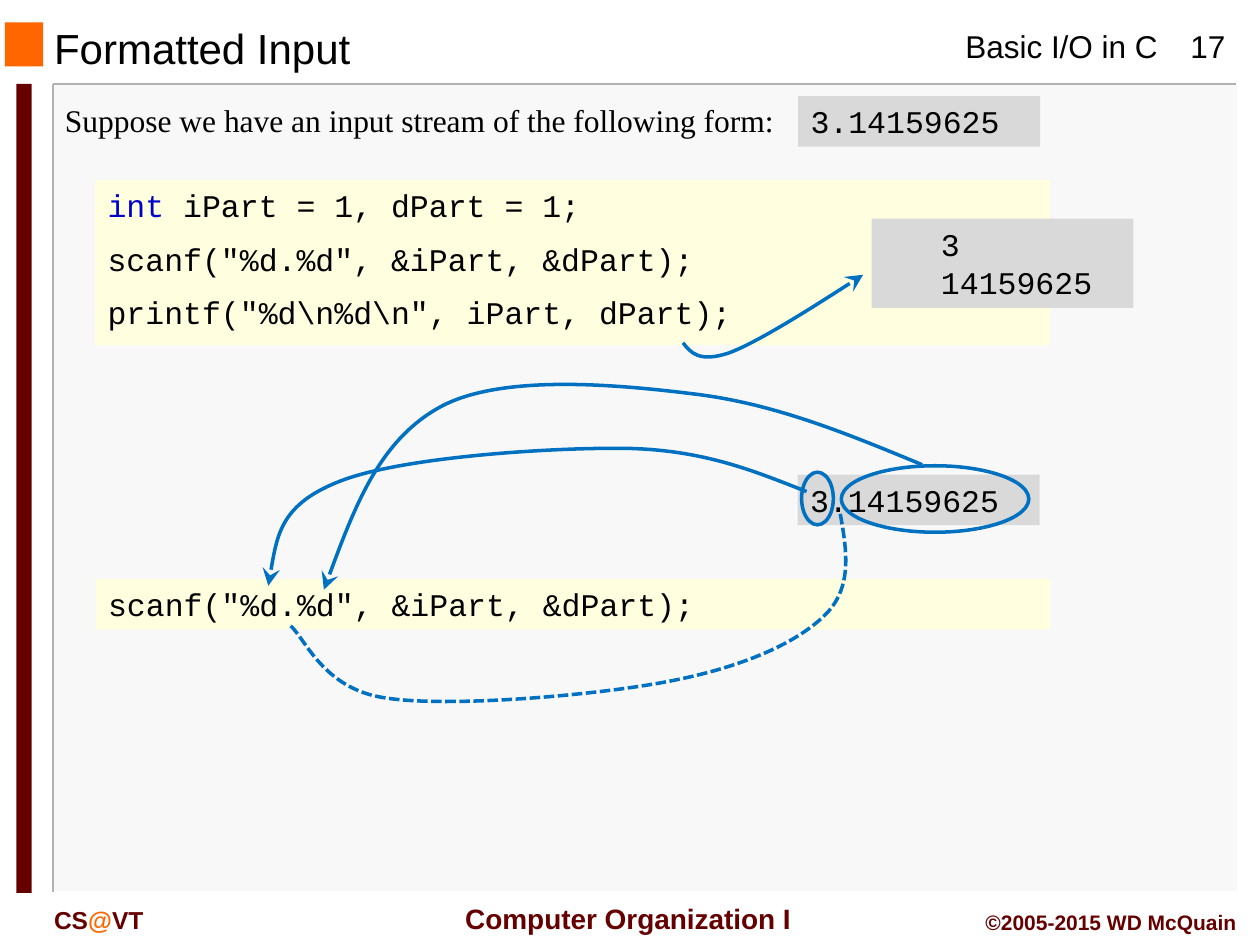
"""Build the "Formatted Input" slide on reading numbers with scanf."""
from lxml import etree
from pptx import Presentation
from pptx import util as u
from pptx.dml.color import RGBColor
from pptx.enum import dml, shapes, text
from pptx.oxml.ns import qn

BLACK = RGBColor(0x00, 0x00, 0x00)
MAROON = RGBColor(0x66, 0x00, 0x00)
ORANGE = RGBColor(0xFF, 0x66, 0x00)
PANEL = RGBColor(0xF8, 0xF8, 0xF8)
RULE = RGBColor(0xB2, 0xB2, 0xB2)
GREY = RGBColor(0xD9, 0xD9, 0xD9)
CREAM = RGBColor(0xFF, 0xFF, 0xE0)
BLUE = RGBColor(0x00, 0x70, 0xC0)
KEYWORD = RGBColor(0x00, 0x00, 0xCC)
LEFT, CENTER, RIGHT = text.PP_ALIGN.LEFT, text.PP_ALIGN.CENTER, text.PP_ALIGN.RIGHT
SCANF = 'scanf("%d.%d", &iPart, &dPart);'

deck = Presentation()
deck.slide_width, deck.slide_height = u.Cm(25.4), u.Cm(19.05)
slide = deck.slides.add_slide(deck.slide_layouts[6])


def add_box(kind, box, fill=None, line=None):
    shape = slide.shapes.add_shape(kind, *map(u.Cm, box))
    shape.shadow.inherit = False
    if fill is None:
        shape.fill.background()
    else:
        shape.fill.solid()
        shape.fill.fore_color.rgb = fill
    if line is None:
        shape.line.fill.background()
    else:
        shape.line.color.rgb = line
        shape.line.width = u.Pt(2)
    return shape


def write(shape, paragraphs, font, size, color=BLACK, bold=False, align=LEFT, wrap=True):
    frame = shape.text_frame
    frame.word_wrap = wrap
    frame.vertical_anchor = text.MSO_ANCHOR.MIDDLE
    for index, runs in enumerate(paragraphs):
        paragraph = frame.paragraphs[0] if index == 0 else frame.add_paragraph()
        paragraph.alignment = align
        paragraph.space_before = u.Pt(9 if index else 0)
        paragraph.font.name, paragraph.font.size = font, u.Pt(size)
        paragraph.font.bold = bold
        for words, tint in runs:
            for row, line in enumerate(words.split("\n")):
                if row:
                    paragraph.add_line_break()
                run = paragraph.add_run()
                run.text = line
                run.font.color.rgb = tint or color


RECT, OVAL = shapes.MSO_SHAPE.RECTANGLE, shapes.MSO_SHAPE.OVAL
for box, fill in [
    ((1.08, 1.7, 23.86, 16.26), PANEL),
    ((0.1, 0.45, 0.77, 0.89), ORANGE),
    ((0.33, 1.69, 0.31, 16.31), MAROON),
]:
    add_box(RECT, box, fill)

for start, end in [((1.07, 1.7), (24.92, 1.7)), ((1.07, 1.7), (1.07, 17.98))]:
    rule = slide.shapes.add_connector(
        shapes.MSO_CONNECTOR.STRAIGHT, *map(u.Cm, start + end))
    rule.line.color.rgb = RULE
    rule.line.width = u.Pt(1)
    etree.SubElement(rule.element.spPr, qn("a:effectLst"))

for box, runs, font, size, color, bold, align, wrap in [
    ((19.21, 0.41, 4.45, 1.02), [("Basic I/O in C", None)], "Arial", 18, BLACK, False, LEFT, False),
    ((8.89, 18.04, 7.39, 0.94), [(" Computer Organization I", None)], "Arial", 16, MAROON, True, CENTER, False),
    ((23.5, 0.41, 1.7, 1.02), [("17", None)], "Arial", 18, BLACK, False, CENTER, True),
    ((0.84, 18.13, 3.81, 0.84), [("CS", None), ("@", ORANGE), ("VT", None)], "Arial", 14, MAROON, True, LEFT, True),
    ((18.63, 18.21, 6.55, 0.76), [("©2005-2015 WD McQuain", None)], "Arial", 12, MAROON, True, RIGHT, True),
    ((0.84, 0.48, 16.08, 0.97), [("Formatted Input", None)], "Arial", 24, BLACK, False, LEFT, True),
    ((1.06, 1.9, 23.5, 1.02), [("Suppose we have an input stream of the following form:", None)],
     "Times New Roman", 18, BLACK, False, LEFT, True),
]:
    label = slide.shapes.add_textbox(*map(u.Cm, box))
    write(label, [runs], font, size, color, bold, align, wrap)

program = [
    [("int ", KEYWORD), ("iPart = 1, dPart = 1;", None)],
    [(SCANF, None)],
    [(r'printf("%d\n%d\n", iPart, dPart);', None)],
]
number = [[("3.14159625", None)]]
for box, fill, lines, inset in [
    ((16.09, 1.94, 4.88, 1.02), GREY, number, 0.25),
    ((1.92, 3.63, 19.25, 3.33), CREAM, program, 0.25),
    ((17.57, 4.41, 5.28, 1.8), GREY, [[("3\n14159625", None)]], 1.4),
    ((16.08, 9.57, 4.88, 1.02), GREY, number, 0.25),
    ((1.93, 11.67, 19.25, 1.02), CREAM, [[(SCANF, None)]], 0.25),
]:
    code = add_box(RECT, box, fill)
    code.text_frame.margin_left = u.Cm(inset)
    write(code, lines, "Courier New", 18)
    code.text_frame.vertical_anchor = text.MSO_ANCHOR.TOP

for box in [(16.16, 9.52, 0.64, 1.06), (16.96, 9.39, 3.78, 1.34)]:
    add_box(OVAL, box, line=BLUE)

for points, dashed in [
    ([(13.77, 6.91), (13.92, 7.11), (14.1, 7.32), (14.71, 7.11),
      (15.32, 6.88), (16.94, 5.84), (17.4, 5.54)], False),
    ([(16.26, 9.91), (15.21, 9.5), (14.2, 9.07), (12.62, 9.04), (11.05, 9.02), (8.08, 9.22),
      (6.86, 9.7), (5.66, 10.16), (5.54, 11), (5.41, 11.81)], False),
    ([(18.59, 9.37), (17.12, 8.76), (15.65, 8.15), (14.05, 7.95), (12.45, 7.75), (10.16, 7.54),
      (8.92, 8.18), (7.67, 8.84), (7.09, 10.36), (6.53, 11.89)], False),
    ([(16.94, 10.36), (17.07, 11.1), (17.2, 11.86), (16.61, 12.42), (16.03, 12.98), (14.94, 13.46),
      (13.46, 13.74), (11.99, 14.02), (9.04, 14.27), (7.77, 14.07), (6.5, 13.89), (6.15, 12.85),
      (5.84, 12.6)], True),
]:
    corners = [(u.Cm(x), u.Cm(y)) for x, y in points]
    outline = slide.shapes.build_freeform(*corners[0])
    outline.add_line_segments(corners[1:], close=False)
    curve = outline.convert_to_shape()
    curve.shadow.inherit = False
    curve.fill.background()
    curve.line.color.rgb = BLUE
    curve.line.width = u.Pt(2)
    segments = list(curve.element.iter(qn("a:lnTo")))
    for first in range(0, len(segments), 3):
        bezier = etree.SubElement(segments[first].getparent(), qn("a:cubicBezTo"))
        for segment in segments[first:first + 3]:
            bezier.append(segment[0])
            segment.getparent().remove(segment)
    if dashed:
        curve.line.dash_style = dml.MSO_LINE.SQUARE_DOT
    else:
        stroke = curve.element.spPr.find(qn("a:ln"))
        etree.SubElement(stroke, qn("a:tailEnd"), type="stealth", w="lg", len="lg")

deck.save("out.pptx")
